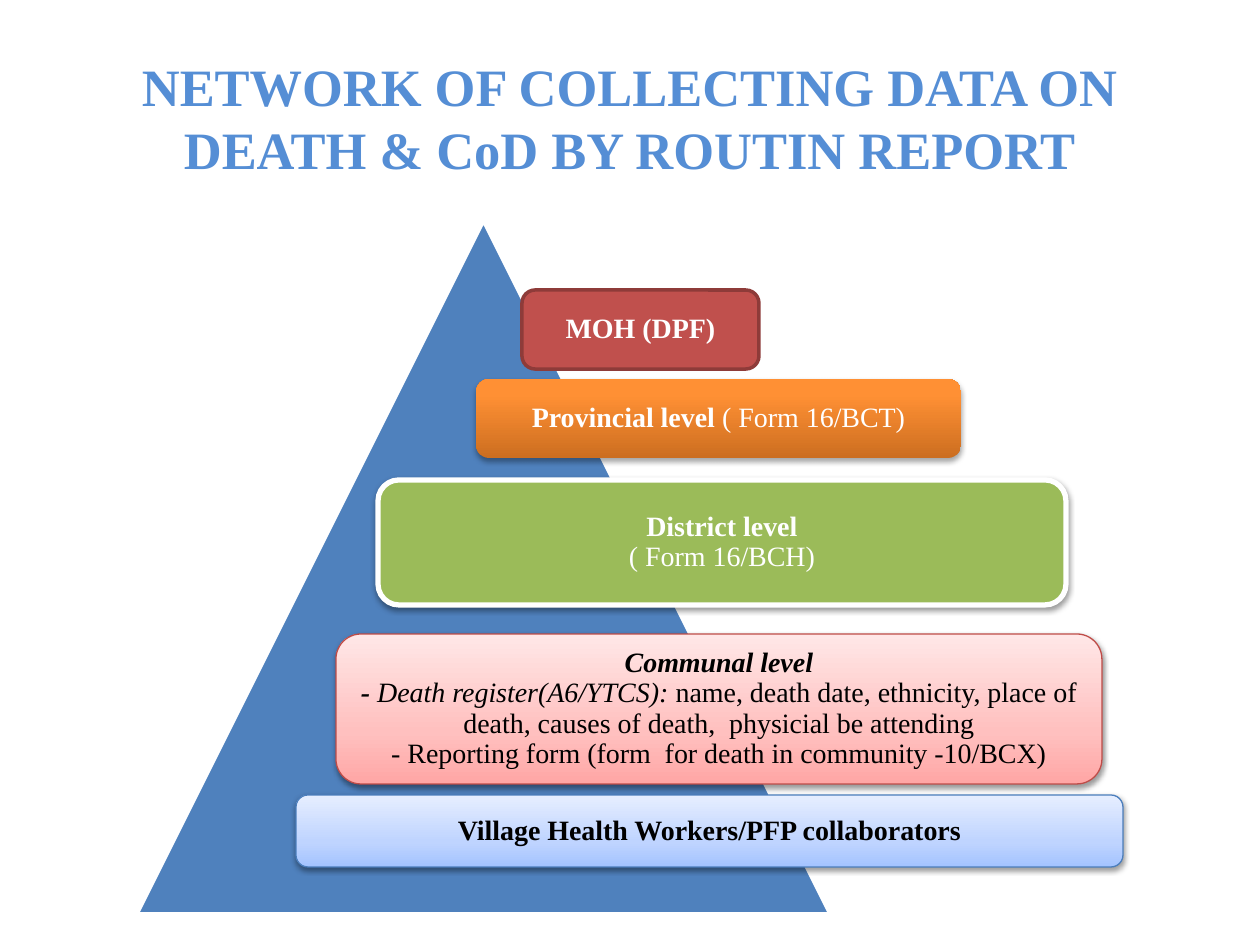
from lxml.etree import SubElement
from pptx import Presentation
from pptx.dml.color import RGBColor
from pptx.enum.shapes import MSO_SHAPE
from pptx.enum.text import MSO_ANCHOR, PP_ALIGN
from pptx.oxml.ns import qn
from pptx.util import Emu, Pt

SCALE = 914400 / 126
FONT = "Times New Roman"
WHITE = RGBColor(0xFF, 0xFF, 0xFF)
BLACK = RGBColor(0x00, 0x00, 0x00)
TITLE_BLUE = RGBColor(0x55, 0x8E, 0xD5)
BLUE = RGBColor(0x4F, 0x81, 0xBD)
RED = RGBColor(0xC0, 0x50, 0x4D)
DARK_RED = RGBColor(0x8E, 0x3B, 0x39)
GREEN = RGBColor(0x9B, 0xBB, 0x59)
PINK_LINE = RGBColor(0xBF, 0x4C, 0x48)
BLUE_LINE = RGBColor(0x4B, 0x7E, 0xBC)
ORANGE_STOPS = [(0, RGBColor(0xCC, 0x6E, 0x20)), (80, RGBColor(0xFF, 0x90, 0x34)),
                (100, RGBColor(0xFF, 0x91, 0x36))]
PINK_STOPS = [(0, RGBColor(0xFF, 0xA6, 0xA5)), (35, RGBColor(0xFF, 0xC0, 0xBF)),
              (100, RGBColor(0xFF, 0xE7, 0xE7))]
BLUE_STOPS = [(0, RGBColor(0xA4, 0xC4, 0xFF)), (35, RGBColor(0xBF, 0xD4, 0xFF)),
              (100, RGBColor(0xE6, 0xEE, 0xFF))]

BOLD, ITALIC, BOLD_ITALIC, PLAIN = (True, False), (False, True), (True, True), (False, False)

# Each level: box within the pyramid area, fill, outline, shadow opacity, text colour, paragraphs
LEVELS = [
    ((385, 69, 237, 79), RED, (DARK_RED, 2), 0, WHITE, [[("MOH (DPF)", BOLD)]]),
    ((339, 158, 485, 79), ORANGE_STOPS, None, 35, WHITE,
     [[("Provincial level ", BOLD), ("( Form 16/BCT)", PLAIN)]]),
    ((241, 259, 688, 125), GREEN, (WHITE, 3), 38, WHITE,
     [[("District level", BOLD)], [("( Form 16/BCH)", PLAIN)]]),
    ((199, 413, 766, 150), PINK_STOPS, (PINK_LINE, 0.75), 38, BLACK,
     [[("Communal level", BOLD_ITALIC)],
      [("- ", BOLD_ITALIC), ("Death register(A6/YTCS):", ITALIC),
       (" name, death date, ethnicity, place of death, causes of death,  physicial be attending",
        PLAIN)],
      [("- Reporting form (form  for death in community -10/BCX)", PLAIN)]]),
    ((159, 574, 827, 72), BLUE_STOPS, (BLUE_LINE, 0.75), 38, BLACK,
     [[("Village Health Workers/PFP collaborators", BOLD)]]),
]


def px(n):
    """Turn pixels into EMU."""
    return Emu(round(n * SCALE))


def set_fill(sp, fill):
    """Fill a shape with one colour or with upward gradient stops."""
    if isinstance(fill, RGBColor):
        sp.fill.solid()
        sp.fill.fore_color.rgb = fill
        return
    sp.fill.gradient()
    sp.fill.gradient_angle = 90
    stops = sp.element.spPr.find(".//" + qn("a:gsLst"))
    stops.clear()
    for pos, color in fill:
        gs = SubElement(stops, qn("a:gs"), pos=str(pos * 1000))
        SubElement(gs, qn("a:srgbClr"), val=str(color))


def set_line(sp, line):
    """Outline a shape with a colour and width, or not at all."""
    if line is None:
        sp.line.fill.background()
        return
    color, width = line
    sp.line.color.rgb = color
    sp.line.width = Pt(width)


def add_shadow(sp, opacity):
    """Give a shape a soft shadow below it."""
    effects = sp.element.spPr.find(qn("a:effectLst"))
    shadow = SubElement(effects, qn("a:outerShdw"), blurRad=str(Pt(3.1)), dist=str(Pt(1.7)),
                        dir="5400000", rotWithShape="0")
    color = SubElement(shadow, qn("a:srgbClr"), val=str(BLACK))
    SubElement(color, qn("a:alpha"), val=str(opacity * 1000))


def add_styled_shape(s, kind, box, fill, line):
    """Add a preset shape with its fill and outline."""
    sp = s.shapes.add_shape(kind, *map(px, box))
    sp.shadow.inherit = False
    set_fill(sp, fill)
    set_line(sp, line)
    return sp


def write_text(tf, paragraphs, color):
    """Write centred paragraphs of bold, italic or plain runs."""
    tf.word_wrap = True
    tf.vertical_anchor = MSO_ANCHOR.MIDDLE
    tf.margin_left = tf.margin_right = px(15)
    tf.margin_top = tf.margin_bottom = px(13)
    for i, runs in enumerate(paragraphs):
        p = tf.paragraphs[0] if i == 0 else tf.add_paragraph()
        p.alignment = PP_ALIGN.CENTER
        p.line_spacing = 0.9
        p.font.name = FONT
        p.font.size = Pt(16)
        p.font.color.rgb = color
        for text, (bold, italic) in runs:
            r = p.add_run()
            r.text = text
            r.font.bold = bold
            r.font.italic = italic


def add_title(s, box):
    """Place and format the title."""
    title = s.shapes.title
    title.left, title.top, title.width, title.height = map(px, box)
    tf = title.text_frame
    tf.text = "NETWORK OF COLLECTING DATA ON DEATH & CoD BY ROUTIN REPORT"
    tf.word_wrap = True
    tf.vertical_anchor = MSO_ANCHOR.MIDDLE
    p = tf.paragraphs[0]
    p.alignment = PP_ALIGN.CENTER
    p.font.name = FONT
    p.font.size = Pt(30)
    p.font.bold = True
    p.font.color.rgb = TITLE_BLUE


def add_pyramid(s, box):
    """Draw the triangle and its reporting levels."""
    left, top, _, _ = box
    add_styled_shape(s, MSO_SHAPE.ISOSCELES_TRIANGLE, box, BLUE, (WHITE, 2))
    for (x, y, w, h), fill, line, opacity, color, paragraphs in LEVELS:
        sp = add_styled_shape(s, MSO_SHAPE.ROUNDED_RECTANGLE, (left + x, top + y, w, h),
                              fill, line)
        if opacity:
            add_shadow(sp, opacity)
        write_text(sp.text_frame, paragraphs, color)


def main():
    """Build and save the slide."""
    prs = Presentation()
    prs.slide_width, prs.slide_height = px(1260), px(945)
    s = prs.slides.add_slide(prs.slide_layouts[5])
    add_title(s, (63, 38, 1134, 158))
    add_pyramid(s, (137, 221, 693, 693))
    prs.save("out.pptx")


if __name__ == "__main__":
    main()
